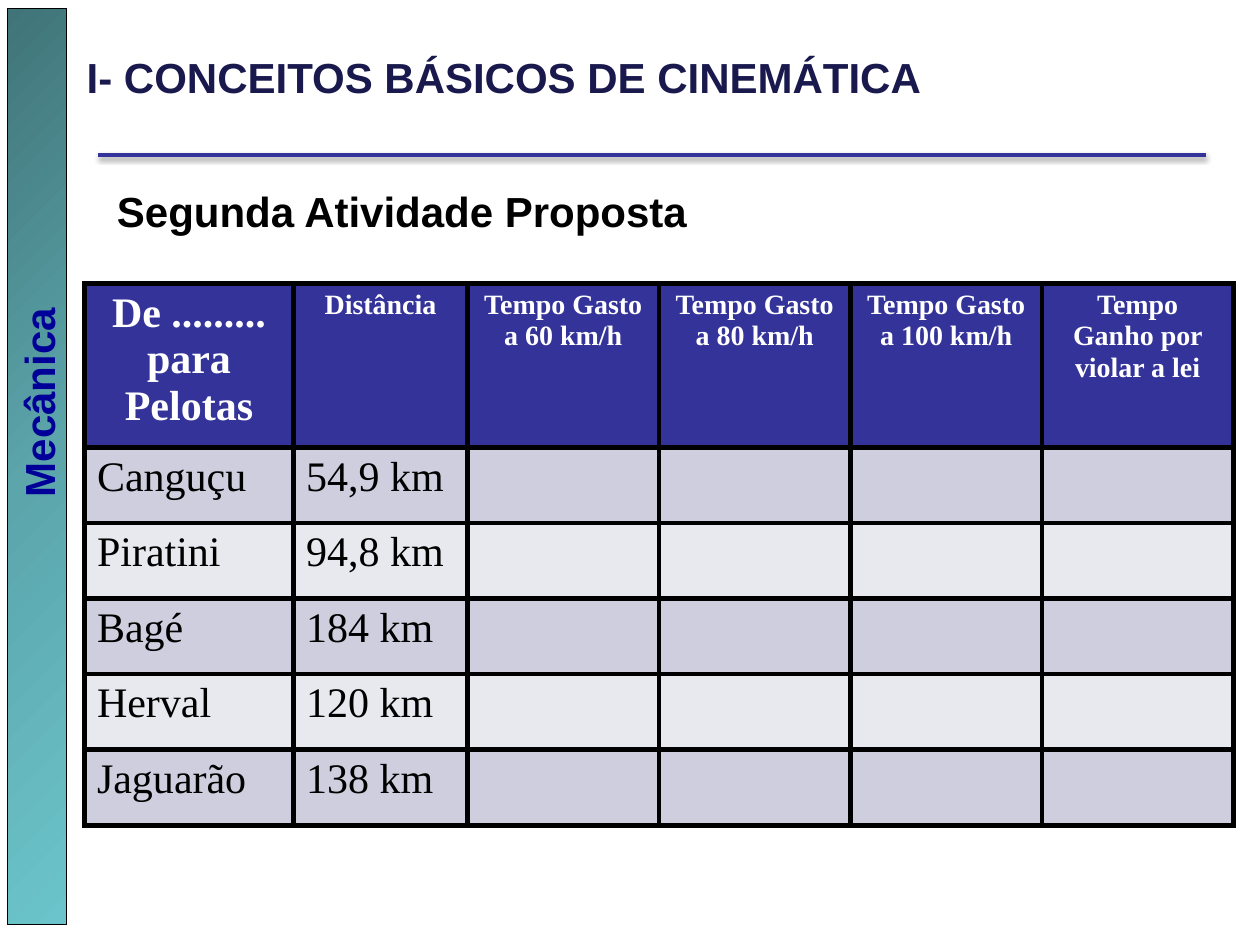
from copy import deepcopy

from lxml import etree
from pptx import Presentation
from pptx import util as u
from pptx.dml.color import RGBColor
from pptx.enum import shapes, text
from pptx.oxml import parse_xml
from pptx.oxml.ns import nsdecls, qn

ALIGN = text.PP_ALIGN


def colour(code):
    return RGBColor.from_string(code)


def inches(*lengths):
    return [u.Inches(length) for length in lengths]


class SlideBuilder:
    heading_font = "Arial"
    table_font = "Times New Roman"
    black = "000000"
    navy = "333399"
    bands = ("CECEDE", "E8E8EF")

    def __init__(self, slide):
        self.slide = slide

    def style(self, paragraph, font, size, code, bold, align):
        paragraph.alignment = align
        paragraph.font.name = font
        paragraph.font.size = u.Pt(size)
        paragraph.font.bold = bold
        paragraph.font.color.rgb = colour(code)

    def gradient_bar(self, box, stops):
        bar = self.slide.shapes.add_shape(shapes.MSO_SHAPE.RECTANGLE, *inches(*box))
        bar.shadow.inherit = False
        bar.line.color.rgb = colour(self.black)
        bar.line.width = u.Pt(0.75)
        bar.fill.gradient()
        bar.fill.gradient_angle = 315
        stop_list = next(bar._element.spPr.iter(qn("a:gsLst")))
        stop_list.insert(1, deepcopy(stop_list[0]))
        for stop, (position, code) in zip(bar.fill.gradient_stops, stops):
            stop.position = position
            stop.color.rgb = colour(code)

    def label(self, wording, box, code, align=ALIGN.LEFT, rotation=0,
              right_margin=0.1, anchor=text.MSO_ANCHOR.TOP):
        label = self.slide.shapes.add_textbox(*inches(*box))
        label.rotation = rotation
        frame = label.text_frame
        frame.word_wrap = True
        frame.margin_right = u.Inches(right_margin)
        frame.vertical_anchor = anchor
        frame.text = wording
        self.style(frame.paragraphs[0], self.heading_font, 24, code, True, align)

    def rule(self, start, end):
        rule = self.slide.shapes.add_connector(
            shapes.MSO_CONNECTOR.STRAIGHT, *inches(*start, *end))
        rule.line.color.rgb = colour(self.navy)
        rule.line.width = u.Pt(2)
        rule._element.spPr.append(parse_xml(
            f'<a:effectLst {nsdecls("a")}>'
            f'<a:outerShdw blurRad="{u.Pt(3.1)}" dist="{u.Pt(1.6)}" dir="5400000" rotWithShape="0">'
            f'<a:srgbClr val="{self.black}"><a:alpha val="38000"/></a:srgbClr>'
            '</a:outerShdw></a:effectLst>'))

    def border(self, cell):
        properties = cell._tc.get_or_add_tcPr()
        for side in ("lnL", "lnR", "lnT", "lnB"):
            edge = etree.SubElement(properties, qn(f"a:{side}"), w=str(u.Pt(3)))
            fill = etree.SubElement(edge, qn("a:solidFill"))
            etree.SubElement(fill, qn("a:srgbClr"), val=self.black)

    def table(self, origin, widths, heights, headers, records):
        size = (sum(widths), sum(heights))
        table = self.slide.shapes.add_table(
            len(heights), len(widths), *inches(*origin, *size)).table
        for column, width in zip(table.columns, widths):
            column.width = u.Inches(width)
        for row, height in zip(table.rows, heights):
            row.height = u.Inches(height)
        blanks = ("",) * (len(headers) - len(records[0]))
        rows = [headers] + [record + blanks for record in records]
        for r, entries in enumerate(rows):
            is_header = r == 0
            background = self.navy if is_header else self.bands[(r - 1) % 2]
            for c, entry in enumerate(entries):
                cell = table.cell(r, c)
                self.border(cell)
                cell.fill.solid()
                cell.fill.fore_color.rgb = colour(background)
                cell.text = entry
                self.style(cell.text_frame.paragraphs[0], self.table_font,
                           16 if is_header and c else 24,
                           "FFFFFF" if is_header else self.black, is_header,
                           ALIGN.CENTER if is_header else ALIGN.LEFT)


def main():
    deck = Presentation()
    deck.slide_width, deck.slide_height = inches(10, 7.5)
    page = SlideBuilder(deck.slides.add_slide(deck.slide_layouts[6]))

    page.gradient_bar((0.06, 0.07, 0.47, 7.27),
                      ((0, "407478"), (0.5, "5BA5AB"), (1, "6BC4CB")))
    page.label("Mecânica", (-1.74, 4.05, 4.09, 0.5), "000099",
               ALIGN.RIGHT, rotation=270, right_margin=0.19)
    page.rule((0.78, 1.23), (9.57, 1.23))

    speeds = (60, 80, 100)
    headers = ("De ......... para Pelotas", "Distância",
               *(f"Tempo Gasto a {speed} km/h" for speed in speeds),
               "Tempo Ganho por violar a lei")
    distances = [("Canguçu", "54,9 km"), ("Piratini", "94,8 km"),
                 ("Bagé", "184 km"), ("Herval", "120 km"), ("Jaguarão", "138 km")]
    page.table((0.67, 2.25), [1.66, 1.38] + [1.52] * 4,
               [1.25] + [0.6] * len(distances), headers, distances)

    page.label("Segunda Atividade Proposta", (0.83, 1.39, 5.04, 0.56), page.black,
               ALIGN.JUSTIFY, anchor=text.MSO_ANCHOR.MIDDLE)
    page.label("I- CONCEITOS BÁSICOS DE CINEMÁTICA", (0.59, 0.36, 8.66, 0.5), "19194D")
    deck.save("out.pptx")


if __name__ == "__main__":
    main()
